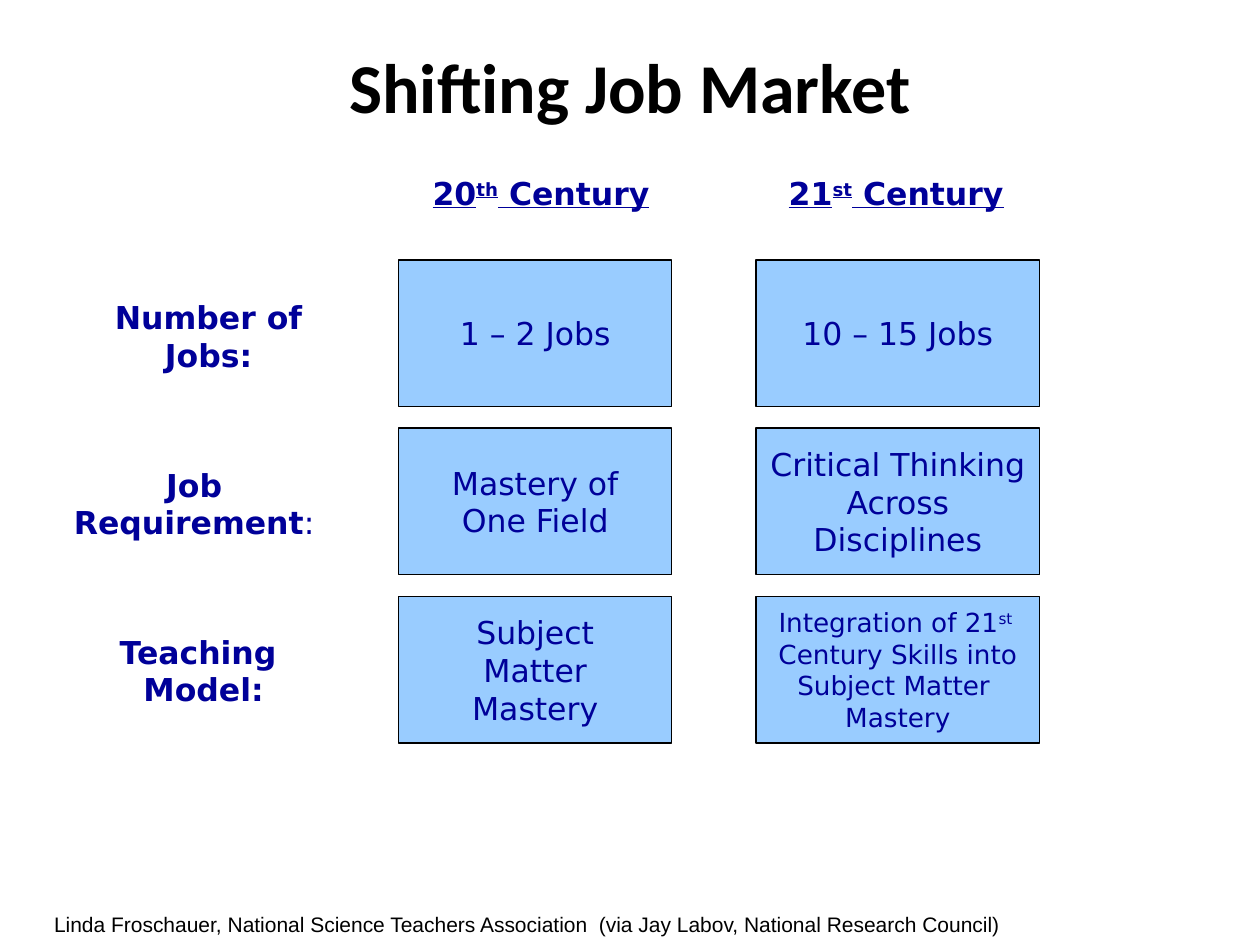
"""Build the "Shifting Job Market" comparison slide."""
from pptx import Presentation
from pptx import util as u
from pptx.dml.color import RGBColor
from pptx.enum import shapes, text

NAVY = RGBColor(0x00, 0x00, 0x99)
SKY = RGBColor(0x99, 0xCC, 0xFF)
BLACK = RGBColor(0x00, 0x00, 0x00)

CENTER = text.PP_ALIGN.CENTER
LEFT = text.PP_ALIGN.LEFT

ROW_TOP, ROW_PITCH, ROW_HEIGHT = 5.24, 3.39, 2.96
LABEL_TOP, LABEL_PITCH, LABEL_HEIGHT = 5.89, 3.37, 1.8

ERAS = [
    (8.04, 5.5, [
        ("1 – 2 Jobs", 18, False),
        ("Mastery of\nOne Field", 18, False),
        ("Subject\nMatter\nMastery", 18, False),
    ]),
    (15.24, 5.72, [
        ("10 – 15 Jobs", 18, False),
        ("Critical Thinking Across Disciplines", 18, True),
        ("Integration of 21^st ^\nCentury Skills into\nSubject Matter \nMastery", 15, False),
    ]),
]
HEADINGS = [(8.47, 4.93, "20^th^ Century"), (15.65, 4.88, "21^st^ Century")]
LABELS = [
    (2.06, 4.29, "Number of\nJobs:", False),
    (0.84, 6.15, "Job\nRequirement", True),
    (2.13, 3.73, "Teaching\n Model:", False),
]


def write(frame, wording, size, color=NAVY, face="DejaVu Sans", bold=False,
          underline=False, align=CENTER, wrap=True):
    """Fill a frame, one paragraph per line, raising the parts between carets."""
    frame.word_wrap = wrap
    for index, line in enumerate(wording.split("\n")):
        paragraph = frame.add_paragraph() if index else frame.paragraphs[0]
        paragraph.alignment = align
        font = paragraph.font
        font.name, font.size = face, u.Pt(size)
        font.bold, font.underline = bold, underline
        font.color.rgb = color
        for position, part in enumerate(line.split("^")):
            if part:
                run = paragraph.add_run()
                run.text = part
                if position % 2:
                    run._r.get_or_add_rPr().set("baseline", "30000")


def add_text(slide, left, top, width, height, wording, size, **style):
    """Add a text box and return its frame."""
    box = slide.shapes.add_textbox(u.Cm(left), u.Cm(top), u.Cm(width), u.Cm(height))
    write(box.text_frame, wording, size, **style)
    return box.text_frame


def add_cell(slide, left, top, width, wording, size, wrap):
    """Add one blue rectangle of the comparison."""
    cell = slide.shapes.add_shape(shapes.MSO_SHAPE.RECTANGLE, u.Cm(left), u.Cm(top),
                                  u.Cm(width), u.Cm(ROW_HEIGHT))
    cell.shadow.inherit = False
    cell.fill.solid()
    cell.fill.fore_color.rgb = SKY
    cell.line.color.rgb = BLACK
    cell.line.width = u.Pt(0.75)
    cell.text_frame.vertical_anchor = text.MSO_ANCHOR.MIDDLE
    write(cell.text_frame, wording, size, wrap=wrap)


def add_label(slide, row, left, width, wording, light_colon):
    """Add a bold row label, closed by a regular-weight colon if asked."""
    frame = add_text(slide, left, LABEL_TOP + row * LABEL_PITCH, width, LABEL_HEIGHT,
                     wording, 18, bold=True, wrap=light_colon)
    if light_colon:
        colon = frame.paragraphs[-1].add_run()
        colon.text = ":"
        colon.font.bold = False


def main():
    """Assemble and save the slide."""
    deck = Presentation()
    deck.slide_width, deck.slide_height = u.Cm(25.4), u.Cm(19.05)
    slide = deck.slides.add_slide(deck.slide_layouts[6])

    for left, width, heading in HEADINGS:
        add_text(slide, left, 3.39, width, 1.02, heading, 18,
                 bold=True, underline=True, align=LEFT, wrap=False)
    for left, width, cells in ERAS:
        for row, (wording, size, wrap) in enumerate(cells):
            add_cell(slide, left, ROW_TOP + row * ROW_PITCH, width, wording, size, wrap)
    for row, label in enumerate(LABELS):
        add_label(slide, row, *label)

    add_text(slide, 0.84, 18.26, 24.56, 0.76,
             "Linda Froschauer, National Science Teachers Association  "
             "(via Jay Labov, National Research Council)",
             12, color=BLACK, face="Arial", align=LEFT)
    add_text(slide, 1.27, 0.76, 22.86, 3.18, "Shifting Job Market", 40,
             color=BLACK, face="Calibri", bold=True)
    deck.save("out.pptx")


if __name__ == "__main__":
    main()
